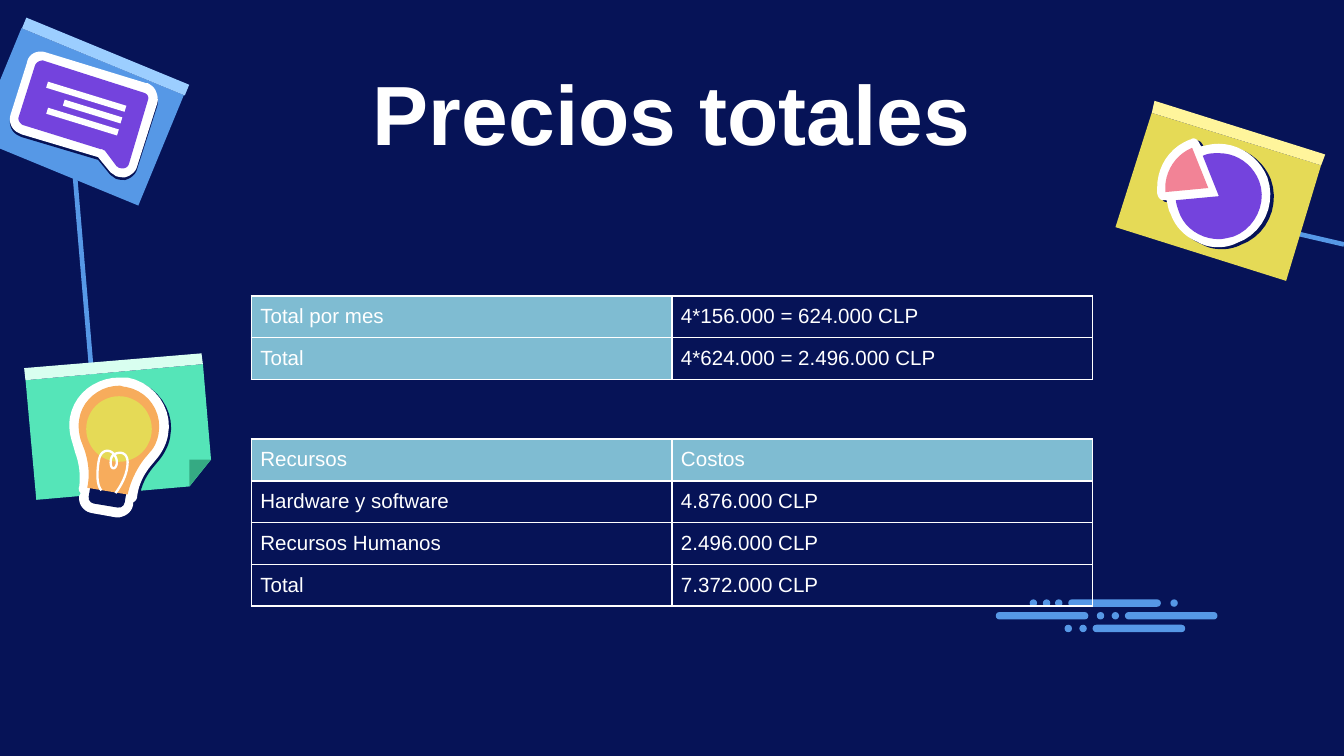
from dataclasses import dataclass

from lxml import etree
from pptx import Presentation, util as u
from pptx.dml.color import RGBColor
from pptx.enum import shapes, text
from pptx.oxml import ns


@dataclass(frozen=True)
class Theme:
    font: str = "Arial"
    title_size: int = 45
    table_size: int = 11
    navy: str = "061357"
    white: str = "FFFFFF"
    blue: str = "5698E6"
    light_blue: str = "9CCEFF"
    purple: str = "7443DD"
    yellow: str = "E5DA56"
    light_yellow: str = "FFF59C"
    pink: str = "F28396"
    green: str = "55E5B8"
    light_green: str = "D9FFF0"
    dark_green: str = "35AA83"
    orange: str = "F7AC5C"
    header: str = "7FBCD2"


RECTANGLE = shapes.MSO_SHAPE.RECTANGLE
ROUNDED = shapes.MSO_SHAPE.ROUNDED_RECTANGLE
OVAL = shapes.MSO_SHAPE.OVAL
PATH_UNIT = u.Cm(2.54) / 100
CURVE_STEPS = 10

# Outlines in path units: a pair is a corner, six numbers are a cubic curve.
BUBBLE_RIM = [
    (110, 62), (109, 62), (34, 39), (28, 37, 21, 40, 20, 47), (8, 85),
    (6, 91, 9, 97, 14, 99), (16, 100), (73, 117), (82, 128),
    (83, 129, 85, 130, 86, 131), (89, 132, 91, 132, 93, 132),
    (97, 131, 101, 128, 102, 124), (117, 77), (118, 74, 117, 70, 116, 68),
    (115, 65, 112, 63, 110, 62)]
BUBBLE = [
    (107, 69), (32, 45), (30, 45, 27, 46, 26, 49), (14, 87),
    (13, 89, 15, 92, 17, 93), (75, 111), (77, 111, 77, 112, 78, 112),
    (87, 124), (88, 124, 88, 125, 89, 125), (92, 126, 95, 125, 96, 122),
    (110, 75), (111, 72, 110, 70, 107, 69)]
PIE_RIM = [
    (888, 103), (887, 103, 886, 104, 885, 104), (870, 110, 861, 124, 861, 140),
    (861, 143), (861, 145, 862, 147, 863, 148), (864, 149, 866, 149, 867, 149),
    (868, 149), (869, 152, 869, 156, 871, 159), (874, 168, 881, 176, 891, 180),
    (896, 183, 901, 184, 907, 184), (911, 184, 916, 183, 920, 181),
    (940, 174, 950, 152, 943, 132), (937, 117, 922, 107, 907, 107),
    (902, 107, 898, 108, 894, 109), (893, 108), (892, 105, 890, 103, 888, 103)]
PIE = [
    (907, 114), (903, 114, 899, 114, 895, 116), (907, 146), (875, 149),
    (875, 151, 876, 154, 877, 157), (881, 170, 894, 178, 907, 178),
    (910, 178, 914, 177, 918, 176), (934, 170, 943, 151, 937, 135),
    (932, 122, 920, 114, 907, 114)]
PIE_SLICE = [(887, 110), (875, 115, 867, 127, 867, 140), (867, 143), (899, 140)]
BULB_RIM = [
    (89, 281), (71, 281, 55, 293, 52, 311), (51, 318, 52, 324, 54, 330),
    (56, 337), (59, 345, 60, 354, 59, 362), (58, 364, 59, 366, 60, 367),
    (59, 369), (58, 375, 62, 381, 69, 382), (86, 385),
    (87, 385, 88, 385, 89, 385), (94, 384, 98, 381, 99, 376), (99, 374),
    (101, 373, 102, 371, 102, 370), (103, 361, 107, 353, 112, 347), (117, 341),
    (121, 336, 124, 330, 125, 324), (129, 304, 115, 285, 95, 281),
    (93, 281, 91, 281, 89, 281)]
BULB = [
    (89, 287), (74, 287, 61, 298, 59, 312), (58, 318, 59, 323, 60, 327),
    (63, 335), (66, 344, 67, 354, 65, 363), (95, 368),
    (97, 359, 101, 350, 107, 342), (112, 336), (115, 333, 117, 328, 118, 323),
    (121, 306, 110, 291, 94, 288), (92, 288, 90, 287, 89, 287)]
FILAMENT = [
    (75.5, 365), (72, 361, 72, 352, 73.5, 343),
    (74.5, 337.5, 77, 335.5, 80, 335.5), (84, 335.5, 87, 340, 87, 344),
    (87, 347, 85.5, 348.5, 84.5, 348.5), (82, 348.5, 82, 343, 83, 340.5),
    (84, 338, 87, 337, 89.5, 337), (93, 337, 95, 340, 95, 344),
    (95, 351, 92, 359, 86, 367)]


def flatten(path):
    """Turn corners and cubic curves into plain points."""
    points = []
    for step in path:
        if len(step) == 2:
            points.append(step)
            continue
        x0, y0 = points[-1]
        x1, y1, x2, y2, x3, y3 = step
        for index in range(1, CURVE_STEPS + 1):
            t = index / CURVE_STEPS
            a, b, c, d = (1 - t) ** 3, 3 * t * (1 - t) ** 2, 3 * t * t * (1 - t), t ** 3
            points.append((a * x0 + b * x1 + c * x2 + d * x3,
                           a * y0 + b * y1 + c * y2 + d * y3))
    return points


class SlideBuilder:
    def __init__(self, slide, theme):
        self.slide, self.theme = slide, theme
        slide.background.fill.solid()
        slide.background.fill.fore_color.rgb = RGBColor.from_string(theme.navy)

    def paint(self, shape, colour):
        shape.shadow.inherit = False
        shape.fill.solid()
        shape.fill.fore_color.rgb = RGBColor.from_string(colour)
        shape.line.fill.background()

    def format_text(self, frame, size, bold=False):
        for paragraph in frame.paragraphs:
            for run in paragraph.runs:
                run.font.name, run.font.size, run.font.bold = self.theme.font, u.Pt(size), bold
                run.font.color.rgb = RGBColor.from_string(self.theme.white)

    def title(self, wording, left, top, width, height):
        shape = self.slide.shapes.title
        shape.left, shape.top, shape.width, shape.height = map(u.Cm, (left, top, width, height))
        frame = shape.text_frame
        frame.text = wording
        frame.auto_size = text.MSO_AUTO_SIZE.NONE
        frame.vertical_anchor = text.MSO_ANCHOR.MIDDLE
        frame.paragraphs[0].alignment = text.PP_ALIGN.CENTER
        self.format_text(frame, self.theme.title_size, bold=True)

    def preset(self, kind, left, top, width, height, colour, rotation=0, rounding=0.5):
        shape = self.slide.shapes.add_shape(kind, *map(u.Cm, (left, top, width, height)))
        if kind == ROUNDED:
            shape.adjustments[0] = rounding
        shape.rotation = rotation
        self.paint(shape, colour)

    def outline(self, path, colour, drop=0, closed=True):
        points = [(x * PATH_UNIT, (y + drop) * PATH_UNIT) for x, y in flatten(path)]
        builder = self.slide.shapes.build_freeform(*points[0], scale=1.0)
        builder.add_line_segments(points[1:], close=closed)
        shape = builder.convert_to_shape()
        self.paint(shape, colour)
        if not closed:
            shape.fill.background()
            shape.line.color.rgb = RGBColor.from_string(colour)
            shape.line.width = u.Pt(1.25)
        return shape

    def cast_shadow(self, shape, distance, degrees):
        effects = shape.element.spPr.find(ns.qn("a:effectLst"))
        shadow = etree.SubElement(effects, ns.qn("a:outerShdw"), dist=str(u.Pt(distance)),
                                  dir=str(degrees * 60000), algn="bl", rotWithShape="0")
        etree.SubElement(shadow, ns.qn("a:srgbClr"), val=self.theme.navy)

    def line(self, *ends):
        connector = self.slide.shapes.add_connector(shapes.MSO_CONNECTOR.STRAIGHT, *map(u.Cm, ends))
        connector.line.color.rgb = RGBColor.from_string(self.theme.blue)
        connector.line.width = u.Pt(2.5)
        etree.SubElement(connector.element.spPr, ns.qn("a:effectLst"))

    def border(self, cell):
        properties = cell._tc.get_or_add_tcPr()
        for position, side in enumerate(("lnL", "lnR", "lnT", "lnB")):
            edge = etree.Element(ns.qn(f"a:{side}"), w=str(u.Pt(1)))
            fill = etree.SubElement(edge, ns.qn("a:solidFill"))
            etree.SubElement(fill, ns.qn("a:srgbClr"), val=self.theme.white)
            properties.insert(position, edge)

    def table(self, top, rows, is_header):
        """Draw rows of wording; is_header(row, column) picks the tinted cells."""
        frame = self.slide.shapes.add_table(len(rows), 2, u.Cm(4.75), u.Cm(top),
                                            u.Cm(15.9), u.Cm(0.79 * len(rows)))
        table = frame.table
        table.first_row = table.horz_banding = False
        for r, row in enumerate(rows):
            for c, wording in enumerate(row):
                cell = table.cell(r, c)
                cell.text_frame.text = wording
                cell.margin_left = cell.margin_right = u.Cm(0.17)
                cell.margin_top = cell.margin_bottom = u.Cm(0.17)
                self.format_text(cell.text_frame, self.theme.table_size)
                if is_header(r, c):
                    cell.fill.solid()
                    cell.fill.fore_color.rgb = RGBColor.from_string(self.theme.header)
                else:
                    cell.fill.background()
                self.border(cell)


def draw_dashes(builder, colour):
    rows = [([19.46, 19.71, 19.94, 22.12], [20.19]),
            ([20.73, 21.01], [18.82, 21.26]),
            ([20.12, 20.4], [20.65])]
    for index, (dots, bars) in enumerate(rows):
        top = 11.33 + 0.24 * index
        for left in dots:
            builder.preset(OVAL, left, top, 0.14, 0.14, colour)
        for left in bars:
            builder.preset(ROUNDED, left, top, 1.75, 0.14, colour)


def draw_chat_note(builder, theme):
    builder.preset(RECTANGLE, -0.15, 1.08, 3.32, 2.26, theme.blue, 22.4)
    builder.preset(RECTANGLE, 0.33, 0.96, 3.33, 0.22, theme.light_blue, 22.4)
    builder.outline(BUBBLE_RIM, theme.navy, drop=2)
    builder.outline(BUBBLE_RIM, theme.white)
    builder.outline(BUBBLE, theme.purple)
    for centre, middle, width in [(1.63, 1.83, 1.55), (1.75, 2.11, 1.14), (1.56, 2.3, 1.4)]:
        builder.preset(RECTANGLE, centre - width / 2, middle - 0.06, width, 0.12, theme.white, 17.1)


def draw_pie_note(builder, theme):
    builder.outline([(857, 84), (830, 169), (957, 209), (983, 123)], theme.yellow)
    builder.outline([(859, 75), (857, 84), (983, 123), (986, 115)], theme.light_yellow)
    builder.cast_shadow(builder.outline(PIE_RIM, theme.white), 2.2, 30)
    builder.outline(PIE, theme.purple)
    builder.outline(PIE_SLICE, theme.pink)


def draw_bulb_note(builder, theme):
    builder.outline([(151, 271), (19, 283), (27, 372), (141, 362), (157, 342)], theme.green)
    builder.outline([(150, 263), (18, 274), (19, 283), (151, 271)], theme.light_green)
    builder.outline([(141, 342), (141, 362), (157, 342)], theme.dark_green)
    builder.cast_shadow(builder.outline(BULB_RIM, theme.white), 1.5, 36)
    builder.preset(ROUNDED, 1.69, 9.1, 0.69, 0.46, theme.navy, 9.5, rounding=0.25)
    builder.outline(BULB, theme.orange)
    builder.preset(OVAL, 1.63, 7.49, 1.24, 1.24, theme.yellow)
    builder.outline(FILAMENT, theme.white, closed=False)


def main():
    presentation = Presentation()
    presentation.slide_width, presentation.slide_height = u.Cm(25.4), u.Cm(14.29)
    theme = Theme()
    builder = SlideBuilder(presentation.slides.add_slide(presentation.slide_layouts[5]), theme)
    builder.line(1.75, 7.26, 1.4, 3.12)
    builder.line(21.77, 3.78, 25.4, 4.62)
    draw_dashes(builder, theme.blue)
    draw_chat_note(builder, theme)
    draw_pie_note(builder, theme)
    draw_bulb_note(builder, theme)
    builder.title("Precios totales", 4.29, 1.32, 16.81, 1.6)
    builder.table(8.3, [("Recursos", "Costos"),
                        ("Hardware y software", "4.876.000 CLP"),
                        ("Recursos Humanos", "2.496.000 CLP"),
                        ("Total", "7.372.000 CLP")], lambda row, column: row == 0)
    builder.table(5.59, [("Total por mes", "4*156.000 = 624.000 CLP"),
                         ("Total", "4*624.000 = 2.496.000 CLP")], lambda row, column: column == 0)
    presentation.save("out.pptx")


if __name__ == "__main__":
    main()
